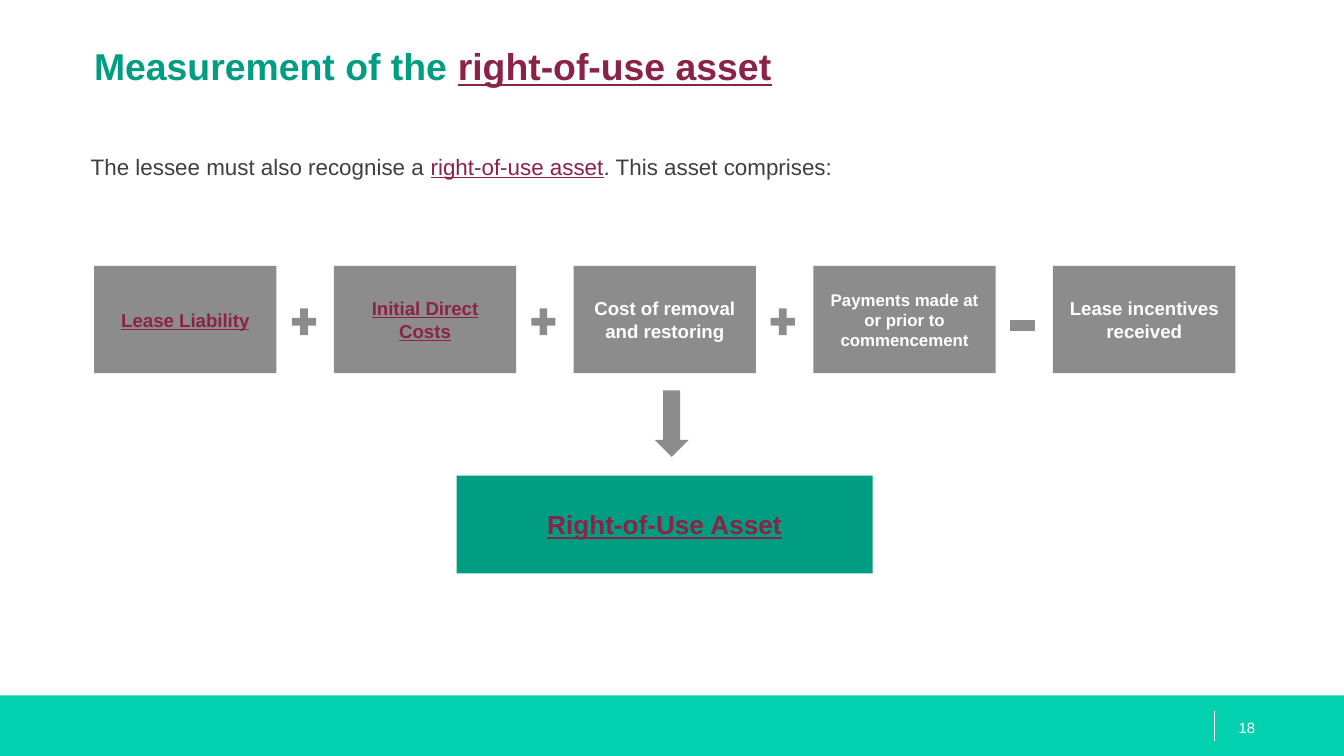
from pptx import Presentation
from pptx.dml.color import RGBColor
from pptx.enum.shapes import MSO_CONNECTOR, MSO_SHAPE
from pptx.enum.text import MSO_ANCHOR, PP_ALIGN
from pptx.oxml.ns import qn
from pptx.util import Pt
from lxml.etree import SubElement

GREEN = "019D82"
MINT = "01D1AE"
GREY = "8C8C8C"
PLUM = "8B2346"
INK = "3F3F3F"
WHITE = "FFFFFF"


def colour(value):
    return RGBColor.from_string(value)


def add_figure(page, kind, box, fill):
    figure = page.shapes.add_shape(kind, *map(Pt, box))
    figure.shadow.inherit = False
    figure.fill.solid()
    figure.fill.fore_color.rgb = colour(fill)
    figure.line.fill.background()
    return figure


def write(shape, spans, size, bold=False, align=PP_ALIGN.LEFT,
          anchor=MSO_ANCHOR.TOP, insets=(0, 0, 0, 0)):
    frame = shape.text_frame
    sides = ("margin_left", "margin_top", "margin_right", "margin_bottom")
    layout = {"word_wrap": True, "vertical_anchor": anchor}
    layout.update(zip(sides, map(Pt, insets)))
    for name, value in layout.items():
        setattr(frame, name, value)
    para = frame.paragraphs[0]
    para.alignment = align
    for text, shade in spans:
        span = para.add_run()
        span.text = text
        formats = {"name": "Arial", "size": Pt(size), "bold": bold,
                   "underline": shade == PLUM}
        for name, value in formats.items():
            setattr(span.font, name, value)
        span.font.color.rgb = colour(shade)


def add_text(page, box, spans, size, **options):
    write(page.shapes.add_textbox(*map(Pt, box)), spans, size, **options)


def add_block(page, box, text, size, fill, shade):
    block = add_figure(page, MSO_SHAPE.RECTANGLE, box, fill)
    write(block, [(text, shade)], size, bold=True, align=PP_ALIGN.CENTER,
          anchor=MSO_ANCHOR.MIDDLE, insets=(7.2, 3.6, 7.2, 3.6))


def add_footer(page, box, number):
    left, top, width, height = box
    add_figure(page, MSO_SHAPE.RECTANGLE, box, MINT)
    rule = left + width - 69.4
    divider = page.shapes.add_connector(
        MSO_CONNECTOR.STRAIGHT, Pt(rule), Pt(top + 8.5), Pt(rule), Pt(top + 24.3))
    divider.line.color.rgb = colour(WHITE)
    divider.line.width = Pt(0.75)
    SubElement(divider._element.spPr, qn("a:effectLst"))
    add_text(page, (rule - 1.4, top + 1.2, 54, 31.7), [(number, WHITE)], 8,
             anchor=MSO_ANCHOR.MIDDLE, insets=(14.4, 0, 0, 0))


def add_heading(page, box):
    add_text(page, box, [("Measurement of the ", GREEN),
                         ("right-of-use asset", PLUM)], 20, bold=True)


def add_intro(page, box):
    add_text(page, box, [("The lessee must also recognise a ", INK),
                         ("right-of-use asset", PLUM),
                         (". This asset comprises:", INK)], 12)


def add_formula(page, box):
    left, top, width, height = box
    parts = [
        ("Lease Liability", 10, PLUM),
        ("Initial Direct Costs", 10, PLUM),
        ("Cost of removal and restoring", 10, WHITE),
        ("Payments made at or prior to commencement", 9, WHITE),
        ("Lease incentives received", 10, WHITE),
    ]
    block_width = 97.7
    step = (width - block_width) / (len(parts) - 1)
    for index, (text, size, shade) in enumerate(parts):
        add_block(page, (left + index * step, top, block_width, height),
                  text, size, GREY, shade)
    plus = (MSO_SHAPE.MATH_PLUS, 20.2, 17.6, 19.4)
    minus = (MSO_SHAPE.MATH_MINUS, 19.5, 18, 24.5)
    for index, (kind, drop, sign_width, sign_height) in enumerate([plus] * 3 + [minus]):
        add_figure(page, kind, (left + 103.7 + index * 128.2, top + drop,
                                sign_width, sign_height), GREY)


def add_result(page, box):
    left, top, width, height = box
    add_figure(page, MSO_SHAPE.DOWN_ARROW, (left + 106, top, 18.3, 35.6), GREY)
    add_block(page, (left, top + 45.6, width, height - 45.6),
              "Right-of-Use Asset", 14, GREEN, PLUM)


def main():
    deck = Presentation()
    deck.slide_width, deck.slide_height = Pt(720), Pt(405)
    page = deck.slides.add_slide(deck.slide_layouts[6])
    add_footer(page, (0, 372.5, 720, 32.5), "18")
    add_heading(page, (50.4, 23.2, 621, 41.8))
    add_intro(page, (48.6, 82, 627, 20))
    add_formula(page, (50.4, 142.5, 611.4, 57.5))
    add_result(page, (244.7, 209.2, 222.8, 98))
    deck.save("out.pptx")


if __name__ == "__main__":
    main()
